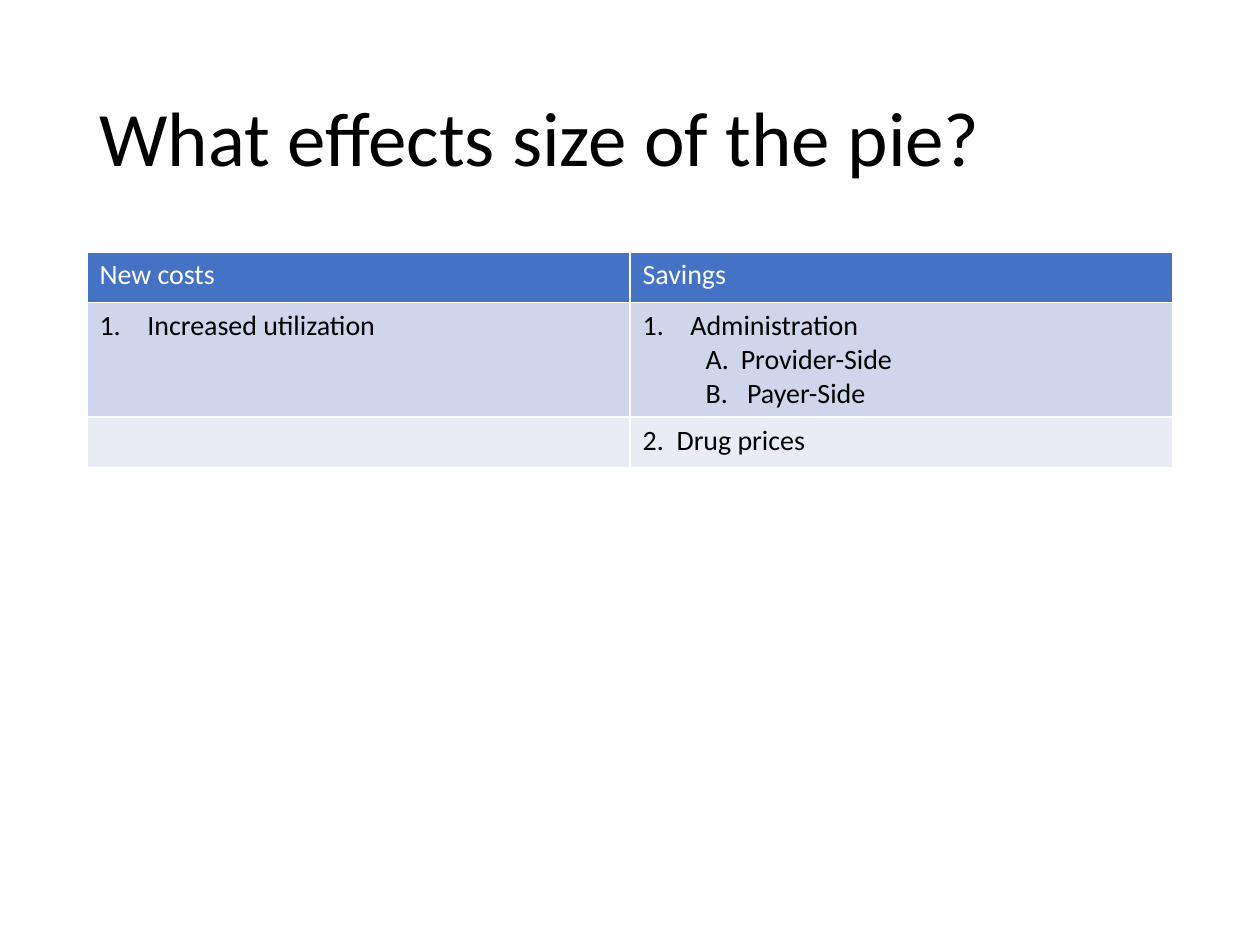
from dataclasses import dataclass
from lxml import etree
from pptx import Presentation
from pptx.dml.color import RGBColor
from pptx.enum.text import MSO_ANCHOR
from pptx.oxml.ns import qn
from pptx.util import Inches, Pt

MIDDLE = MSO_ANCHOR.MIDDLE


@dataclass
class Theme:
    font: str = "Calibri"
    black: str = "000000"
    white: str = "FFFFFF"
    fills: tuple = ("4472C4", "CFD5EA", "E9EBF5")
    title: int = 44
    body: int = 16
    edge: int = 1


theme = Theme()


def write(par, text, size, color):
    run = par.add_run()
    run.text = text
    run.font.name = theme.font
    run.font.size = Pt(size)
    run.font.color.rgb = RGBColor.from_string(color)


def number(par, style, start, left, hang):
    props = par._p.get_or_add_pPr()
    props.set("marL", str(Inches(left)))
    props.set("indent", str(-Inches(hang)))
    mark = etree.SubElement(props, qn("a:buAutoNum"), type=style)
    if start > 1:
        mark.set("startAt", str(start))


deck = Presentation()
deck.slide_width, deck.slide_height = Inches(10), Inches(7.5)
slide = deck.slides.add_slide(deck.slide_layouts[6])

left, width = Inches(0.69), Inches(8.62)
title = slide.shapes.add_textbox(left, Inches(0.4), width, Inches(1.45)).text_frame
title.word_wrap = True
title.vertical_anchor = MIDDLE
title.paragraphs[0].line_spacing = 0.9
write(title.paragraphs[0], "What effects size of the pie?", theme.title, theme.black)

main = ("arabicPeriod", 1, 0.38, 0.38)
drug = ("arabicPeriod", 2, 0.27, 0.27)
side_a = ("alphaUcPeriod", 1, 0.78, 0.28)
side_b = ("alphaUcPeriod", 2, 0.83, 0.33)
rows = [
    (0.4, [[("New costs", None)], [("Savings", None)]]),
    (0.91, [
        [("Increased utilization", main)],
        [("Administration", main), ("Provider-Side", side_a), ("Payer-Side", side_b)],
    ]),
    (0.4, [[], [("Drug prices", drug)]]),
]

high = Inches(sum(row[0] for row in rows))
table = slide.shapes.add_table(len(rows), 2, left, Inches(2), width, high).table
for r, (tall, cells) in enumerate(rows):
    table.rows[r].height = Inches(tall)
    color = theme.black if r else theme.white
    for c, lines in enumerate(cells):
        cell = table.cell(r, c)
        props = cell._tc.get_or_add_tcPr()
        for side in ("lnL", "lnR", "lnT", "lnB"):
            edge = etree.SubElement(props, qn(f"a:{side}"), w=str(Pt(theme.edge)))
            paint = etree.SubElement(edge, qn("a:solidFill"))
            etree.SubElement(paint, qn("a:srgbClr"), val=theme.white)
        cell.fill.solid()
        cell.fill.fore_color.rgb = RGBColor.from_string(theme.fills[r])
        frame = cell.text_frame
        frame.paragraphs[0].font.size = Pt(theme.body)
        for i, (text, style) in enumerate(lines):
            par = frame.add_paragraph() if i else frame.paragraphs[0]
            if style:
                number(par, *style)
            write(par, text, theme.body, color)
            par.font.bold = False

deck.save("out.pptx")
